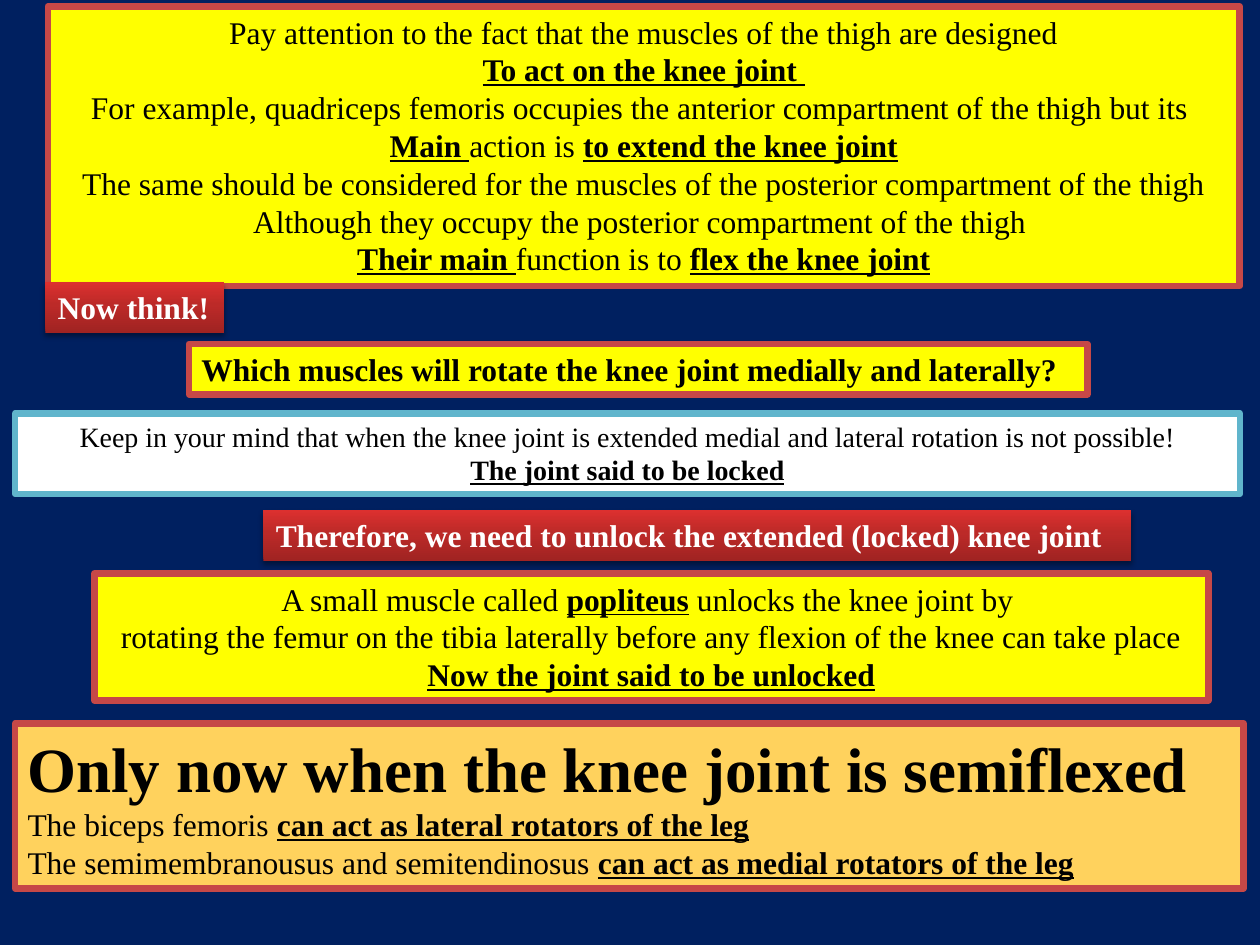
from copy import deepcopy
from dataclasses import dataclass

from lxml.etree import SubElement
from pptx import Presentation
from pptx.dml.color import RGBColor as RGB
from pptx.enum.text import MSO_ANCHOR as Anchor, MSO_AUTO_SIZE as AutoSize, PP_ALIGN as Align
from pptx.oxml.ns import qn
from pptx.util import Inches, Pt


@dataclass(frozen=True)
class Theme:
    font: str = "Times New Roman"
    headline: int = 36
    body: int = 18
    note: int = 16
    border: float = 3.78
    navy: str = "002060"
    black: str = "000000"
    white: str = "FFFFFF"
    yellow: str = "FFFF00"
    amber: str = "FFD25D"
    red: str = "C64847"
    teal: str = "60B5CC"
    banner: tuple = ((0, "A02322"), (0.55, "BC2A28"), (1, "DC302F"))


THEME = Theme()


def plain(text, size=THEME.body):
    return text, size, False, False


def bold(text, size=THEME.body):
    return text, size, True, False


def key(text, size=THEME.body):
    """A bold, underlined span."""
    return text, size, True, True


def add_box(page, area, lines, align=Align.LEFT, color=THEME.black, wrap=False):
    box = page.shapes.add_textbox(*map(Inches, area))
    frame = box.text_frame
    frame.word_wrap = wrap
    frame.auto_size = AutoSize.SHAPE_TO_FIT_TEXT
    frame.vertical_anchor = Anchor.TOP
    for index, spans in enumerate(lines):
        para = frame.paragraphs[0] if index == 0 else frame.add_paragraph()
        para.alignment = align
        for text, size, is_bold, is_underlined in spans:
            span = para.add_run()
            span.text = text
            font = span.font
            font.name, font.size = THEME.font, Pt(size)
            font.bold, font.underline = is_bold, is_underlined
            font.color.rgb = RGB.from_string(color)
    return box


def add_panel(page, area, lines, fill=THEME.yellow, border=THEME.red, **text_options):
    """A flat box with a coloured border."""
    box = add_box(page, area, lines, **text_options)
    box.fill.solid()
    box.fill.fore_color.rgb = RGB.from_string(fill)
    box.line.color.rgb = RGB.from_string(border)
    box.line.width = Pt(THEME.border)


def add_banner(page, area, text):
    """A red gradient box with a soft shadow and white text."""
    box = add_box(page, area, [[bold(text)]], color=THEME.white)
    box.fill.gradient()
    box.fill.gradient_angle = 90
    properties = box._element.spPr
    stop_list = properties.find(".//" + qn("a:gsLst"))
    stop_list.insert(1, deepcopy(stop_list[0]))
    for stop, (position, color) in zip(box.fill.gradient_stops, THEME.banner):
        stop.position = position
        stop.color.rgb = RGB.from_string(color)

    box.shadow.inherit = False
    effects = properties.find(qn("a:effectLst"))
    shadow = SubElement(effects, qn("a:outerShdw"), blurRad=str(Pt(3.1)),
                        dist=str(Pt(2)), dir="5400000", rotWithShape="0")
    tint = SubElement(shadow, qn("a:srgbClr"), val=THEME.black)
    SubElement(tint, qn("a:alpha"), val="38000")


def build_knee_slide(page):
    page.background.fill.solid()
    page.background.fill.fore_color.rgb = RGB.from_string(THEME.navy)

    add_panel(page, (0.38, 0.05, 9.46, 2.22), [
        [plain("Pay attention to the fact that the muscles of the thigh are designed")],
        [key("To act on the knee joint ")],
        [plain("For example, quadriceps femoris occupies the anterior compartment "
               "of the thigh but its ")],
        [key("Main "), plain("action is "), key("to extend the knee joint")],
        [plain("The same should be considered for the muscles of the posterior "
               "compartment of the thigh")],
        [plain("Although they occupy the posterior compartment of the thigh ")],
        [key("Their main "), plain("function is to "), key("flex the knee joint")],
    ], align=Align.CENTER)

    add_banner(page, (0.36, 2.24, 1.42, 0.4), "Now think!")

    add_panel(page, (1.5, 2.73, 7.13, 0.4), [
        [bold("Which muscles will rotate the knee joint medially and laterally?")],
    ])

    add_panel(page, (0.12, 3.28, 9.72, 0.64), [
        [plain("Keep in your mind that when the knee joint is extended medial and "
               "lateral rotation is not possible!", THEME.note)],
        [key("The joint said to be locked", THEME.note)],
    ], fill=THEME.white, border=THEME.teal, align=Align.CENTER, wrap=True)

    add_banner(page, (2.09, 4.05, 6.89, 0.4),
               "Therefore, we need to unlock the extended (locked) knee joint")

    add_panel(page, (0.75, 4.55, 8.84, 1.01), [
        [plain("A small muscle called "), key("popliteus"),
         plain(" unlocks the knee joint by ")],
        [plain("rotating the femur on the tibia laterally before any flexion of the "
               "knee can take place")],
        [key("Now the joint said to be unlocked")],
    ], align=Align.CENTER)

    add_panel(page, (0.12, 5.74, 9.75, 1.31), [
        [bold("Only now when the knee joint is semiflexed", THEME.headline)],
        [plain("The biceps femoris "), key("can act as lateral rotators of the leg")],
        [plain("The semimembranousus and semitendinosus "),
         key("can act as medial rotators of the leg")],
    ], fill=THEME.amber)


def main():
    deck = Presentation()
    deck.slide_width, deck.slide_height = Inches(10), Inches(7.5)
    blank_layout = deck.slide_layouts[6]
    build_knee_slide(deck.slides.add_slide(blank_layout))
    deck.save("out.pptx")


if __name__ == "__main__":
    main()
